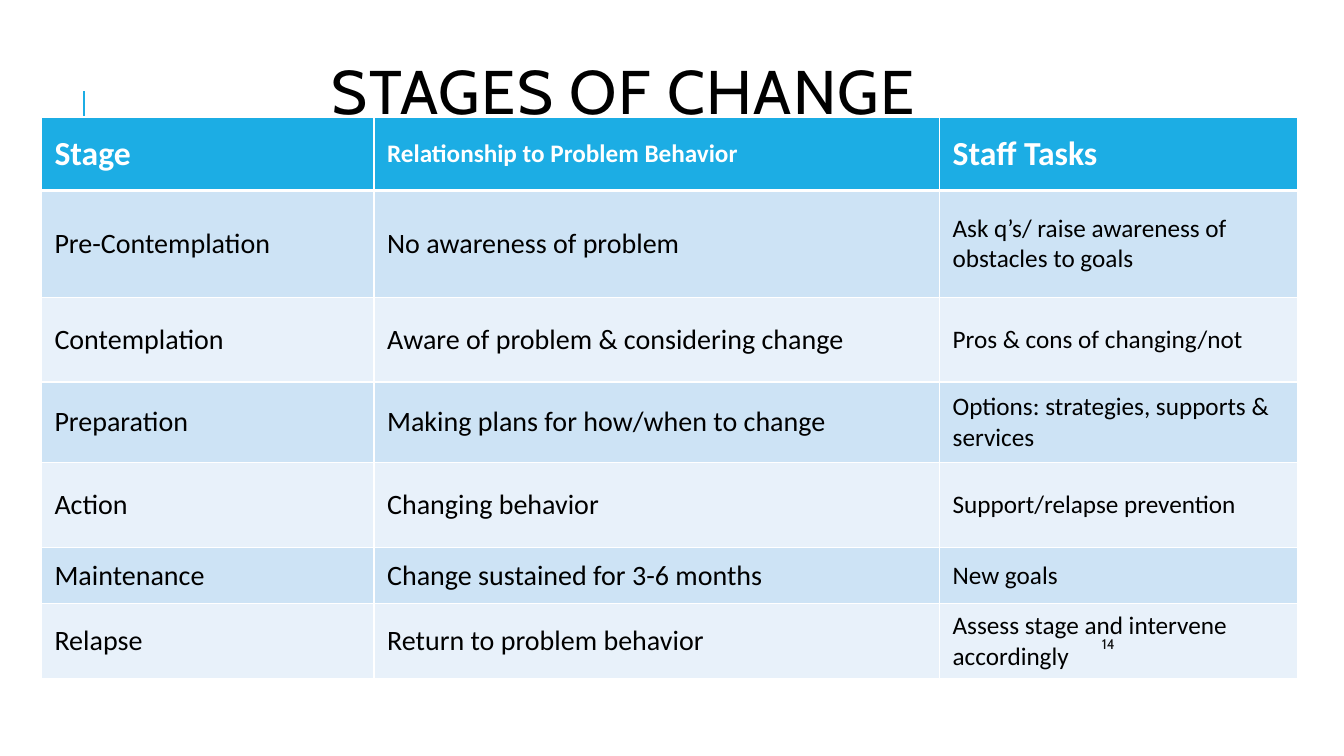
from lxml import etree
from pptx import Presentation
from pptx.dml.color import RGBColor
from pptx.enum.shapes import MSO_CONNECTOR
from pptx.enum.text import MSO_ANCHOR, PP_ALIGN
from pptx.oxml.ns import qn
from pptx.util import Inches, Pt

SLIDE_WIDTH, SLIDE_HEIGHT = Inches(13.33), Inches(7.5)
TITLE_ONLY = 5
ACCENT, WHITE, BLACK = "1CADE4", "FFFFFF", "000000"
BANDS = ["CDE3F5", "E8F1FA"]

# Percentages of the slide's width and height
TABLE_LEFT, TABLE_TOP = 3.08, 15.47
COLUMN_SHARES = [24.75, 42.08, 26.63]
ROW_SHARES = [9.73, 14.13, 11.2, 10.67, 11.2, 7.47, 9.87]

HEADER_SIZES = [24, 18, 24]
BODY_SIZES = [20, 20, 18]
STAGES = [
    ("Stage", "Relationship to Problem Behavior", "Staff Tasks"),
    ("Pre-Contemplation", "No awareness of problem",
     "Ask q’s/ raise awareness of obstacles to goals"),
    ("Contemplation", "Aware of problem & considering change",
     "Pros & cons of changing/not"),
    ("Preparation", "Making plans for how/when to change",
     "Options: strategies, supports & services"),
    ("Action", "Changing behavior", "Support/relapse prevention"),
    ("Maintenance", "Change sustained for 3-6 months", "New goals"),
    ("Relapse", "Return to problem behavior",
     "Assess stage and intervene accordingly"),
]


def across(percent):
    return round(SLIDE_WIDTH * percent / 100)


def down(percent):
    return round(SLIDE_HEIGHT * percent / 100)


def color(hex_string):
    return RGBColor.from_string(hex_string)


def set_attributes(target, values):
    for name, value in values.items():
        setattr(target, name, value)


def write(frame, text, hex_string, **font_values):
    """Fill a text frame with one formatted, left-aligned run."""
    frame.word_wrap = True
    para = frame.paragraphs[0]
    para.alignment = PP_ALIGN.LEFT
    span = para.add_run()
    span.text = text
    set_attributes(span.font, font_values)
    span.font.color.rgb = color(hex_string)
    return para, span


def add_title(page, text):
    title = page.shapes.title
    set_attributes(title, {"left": across(8.4), "top": down(1.87),
                           "width": across(79.72), "height": down(21.87)})
    frame = title.text_frame
    set_attributes(frame, {"margin_left": across(16.3),
                           "vertical_anchor": MSO_ANCHOR.MIDDLE})
    para, span = write(frame, text, BLACK, name="Cabin", size=Pt(44))
    para.line_spacing = 0.8
    span.font._element.set("spc", "100")


def add_accent_line(page):
    line = page.shapes.add_connector(
        MSO_CONNECTOR.STRAIGHT, across(6.23), down(25.33), across(6.23), down(12))
    line.line.color.rgb = color(ACCENT)
    line.line.width = Pt(1.5)
    etree.SubElement(line._element.spPr, qn("a:effectLst"))


def add_border(cell, side, points):
    properties = cell._tc.get_or_add_tcPr()
    border = etree.SubElement(properties, qn(f"a:ln{side}"), w=str(Pt(points)))
    fill = etree.SubElement(border, qn("a:solidFill"))
    etree.SubElement(fill, qn("a:srgbClr"), val=WHITE)


def format_cell(cell, text, row, column):
    set_attributes(cell, {
        "vertical_anchor": MSO_ANCHOR.MIDDLE,
        "margin_left": Inches(0.13), "margin_right": Inches(0.13),
        "margin_top": Inches(0.04), "margin_bottom": Inches(0.04)})
    is_header = row == 0
    sizes = HEADER_SIZES if is_header else BODY_SIZES
    write(cell.text_frame, text, WHITE if is_header else BLACK,
          name="Calibri", size=Pt(sizes[column]), bold=is_header)
    widths = {"L": 1, "R": 1, "T": 3 if row == 1 else 1, "B": 3 if is_header else 1}
    for side, points in widths.items():
        add_border(cell, side, points)
    cell.fill.solid()
    cell.fill.fore_color.rgb = color(ACCENT if is_header else BANDS[(row - 1) % 2])


def add_stage_table(page):
    table = page.shapes.add_table(
        len(ROW_SHARES), len(COLUMN_SHARES), across(TABLE_LEFT), down(TABLE_TOP),
        across(sum(COLUMN_SHARES)), down(sum(ROW_SHARES))).table
    for column, share in zip(table.columns, COLUMN_SHARES):
        column.width = across(share)
    for row, share in zip(table.rows, ROW_SHARES):
        row.height = down(share)
    for row, texts in enumerate(STAGES):
        for column, text in enumerate(texts):
            format_cell(table.cell(row, column), text, row, column)


def add_page_number(page, number):
    box = page.shapes.add_textbox(across(81.25), down(83.2), across(10.73), down(4))
    box.text_frame.vertical_anchor = MSO_ANCHOR.MIDDLE
    write(box.text_frame, number, "0D0D0D", name="Cabin", size=Pt(10))


def main():
    deck = Presentation()
    set_attributes(deck, {"slide_width": SLIDE_WIDTH, "slide_height": SLIDE_HEIGHT})
    page = deck.slides.add_slide(deck.slide_layouts[TITLE_ONLY])
    add_accent_line(page)
    add_title(page, "STAGES OF CHANGE")
    add_stage_table(page)
    add_page_number(page, "14")
    deck.save("out.pptx")


if __name__ == "__main__":
    main()
